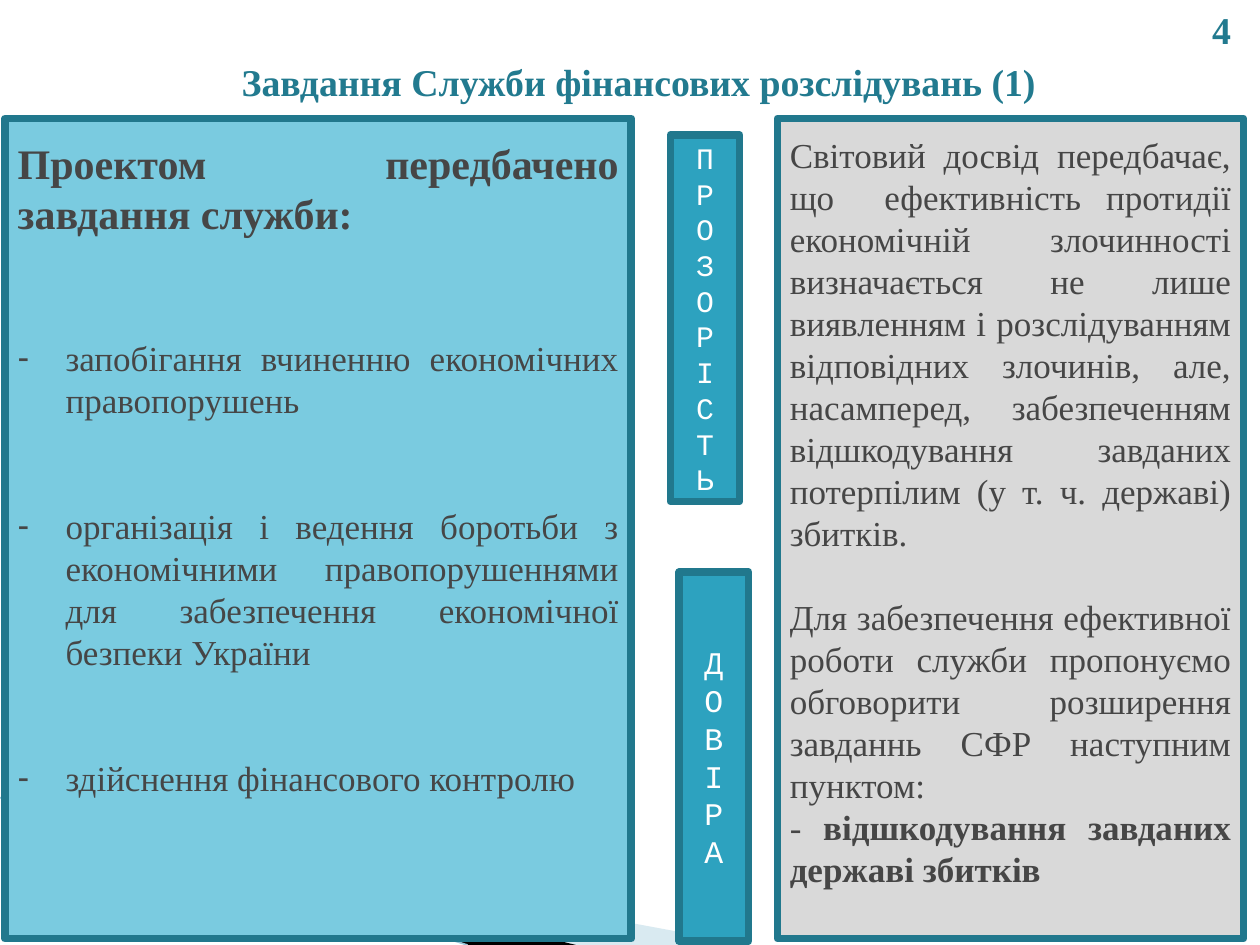
import dataclasses

import lxml.etree
import pptx
import pptx.dml.color
import pptx.enum.dml
import pptx.enum.shapes
import pptx.enum.text
import pptx.oxml.ns
import pptx.util

Inches = pptx.util.Inches
Pt = pptx.util.Pt
ALIGN = pptx.enum.text.PP_ALIGN
ANCHOR = pptx.enum.text.MSO_ANCHOR
qn = pptx.oxml.ns.qn


@dataclasses.dataclass(frozen=True)
class Theme:
    serif: str = "Times New Roman"
    mono: str = "Courier New"
    accent: str = "227A8F"
    border: str = "21788D"
    task_fill: str = "7ACBE0"
    note_fill: str = "D9D9D9"
    pillar_fill: str = "2DA2BF"
    text: str = "464646"
    light: str = "FFFFFF"
    wave_light: str = "A0CBDC"
    wave_dark: str = "000000"
    wave_line: str = "97C5D8"
    title_pt: float = 21.6
    heading_pt: float = 24
    body_pt: float = 20
    border_pt: float = 4.33


THEME = Theme()
HEADING = "Проектом передбачено завдання служби:"
TASKS = [
    "запобігання вчиненню економічних правопорушень",
    "організація і ведення боротьби з економічними правопорушеннями "
    "для забезпечення економічної безпеки України",
    "здійснення фінансового контролю",
]
NOTES = [
    [("Світовий досвід передбачає, що  ефективність протидії економічній "
      "злочинності визначається не лише виявленням і розслідуванням "
      "відповідних злочинів, але, насамперед, забезпеченням відшкодування "
      "завданих потерпілим (у т. ч. державі) збитків.", False)],
    [("Для забезпечення ефективної роботи служби пропонуємо обговорити "
      "розширення завданнь СФР наступним пунктом:", False)],
    [("- ", False), ("відшкодування завданих державі збитків", True)],
]


def rgb(value):
    return pptx.dml.color.RGBColor.from_string(value)


def place(s, box):
    s.left, s.top, s.width, s.height = (Inches(v) for v in box)


def paint(s, fill):
    s.fill.solid()
    s.fill.fore_color.rgb = rgb(fill)
    s.line.color.rgb = rgb(THEME.border)
    s.line.width = Pt(THEME.border_pt)


def setup_text(s, anchor, top=0.05):
    tf = s.text_frame
    tf.word_wrap = True
    tf.auto_size = pptx.enum.text.MSO_AUTO_SIZE.NONE
    tf.vertical_anchor = anchor
    tf.margin_top = Inches(top)
    return tf


def add_paragraph(tf, index, align, before=0, after=0):
    p = tf.paragraphs[0] if index == 0 else tf.add_paragraph()
    p.alignment = align
    p.space_before = Pt(before)
    p.space_after = Pt(after)
    return p


def add_run(p, text, size, color, font=THEME.serif, bold=False):
    r = p.add_run()
    r.text = text
    r.font.name = font
    r.font.size = Pt(size)
    r.font.bold = bold
    r.font.color.rgb = rgb(color)


def set_bullet(p, char=None, indent=0):
    """Hang the paragraph on a bullet, or clear the inherited one."""
    pPr = p._p.get_or_add_pPr()
    pPr.set("marL", str(Inches(indent)))
    pPr.set("indent", str(-Inches(indent)))
    if char:
        lxml.etree.SubElement(pPr, qn("a:buChar")).set("char", char)
    else:
        lxml.etree.SubElement(pPr, qn("a:buNone"))


def add_rect(slide, box, fill):
    s = slide.shapes.add_shape(pptx.enum.shapes.MSO_SHAPE.RECTANGLE,
                               *(Inches(v) for v in box))
    s.shadow.inherit = False
    paint(s, fill)
    return s


def add_wave(slide, points, fill, opacity=100):
    start, *rest = [(Inches(x), Inches(y)) for x, y in points]
    builder = slide.shapes.build_freeform(*start)
    builder.add_line_segments(rest, close=True)
    s = builder.convert_to_shape()
    s.shadow.inherit = False
    s.fill.solid()
    s.fill.fore_color.rgb = rgb(fill)
    s.line.fill.background()
    if opacity < 100:
        color = s._element.spPr.find(".//" + qn("a:srgbClr"))
        lxml.etree.SubElement(color, qn("a:alpha")).set("val", str(opacity * 1000))
    return s


def add_backdrop(slide, left, top):
    """Corner waves and their edge line, sent behind the text."""
    bottom = 7.5
    light = add_wave(slide, [(left, top), (left + 5.4, bottom),
                             (left + 4.01, bottom)], THEME.wave_light, 40)
    dark = add_wave(slide, [(left, top), (left + 4.02, bottom),
                            (left + 3.17, bottom)], THEME.wave_dark)
    line = slide.shapes.add_connector(
        pptx.enum.shapes.MSO_CONNECTOR.STRAIGHT,
        0, Inches(top - 0.17), Inches(left + 3.16), Inches(bottom))
    line.line.color.rgb = rgb(THEME.wave_line)
    line.line.width = Pt(0.95)
    lxml.etree.SubElement(line._element.spPr, qn("a:effectLst"))
    for position, s in enumerate((light, dark, line), start=2):
        slide.shapes._spTree.insert(position, s._element)


def add_header(s, box, text):
    place(s, box)
    p = add_paragraph(setup_text(s, ANCHOR.MIDDLE), 0, ALIGN.CENTER)
    add_run(p, text, THEME.title_pt, THEME.accent, bold=True)


def add_tasks(s, box):
    place(s, box)
    paint(s, THEME.task_fill)
    tf = setup_text(s, ANCHOR.TOP, 0.15)
    p = add_paragraph(tf, 0, ALIGN.JUSTIFY, after=56)
    set_bullet(p)
    add_run(p, HEADING, THEME.heading_pt, THEME.text, bold=True)
    for i, task in enumerate(TASKS, start=1):
        p = add_paragraph(tf, i, ALIGN.JUSTIFY, after=48 if i < len(TASKS) else 0)
        set_bullet(p, "-", 0.38)
        add_run(p, task, THEME.body_pt, THEME.text)


def add_notes(slide, box):
    tf = setup_text(add_rect(slide, box, THEME.note_fill), ANCHOR.TOP, 0.12)
    for i, runs in enumerate(NOTES):
        p = add_paragraph(tf, i, ALIGN.JUSTIFY, before=24 if i == 1 else 0)
        for text, bold in runs:
            add_run(p, text, THEME.body_pt, THEME.text, bold=bold)


def add_pillar(slide, box, word, size):
    """Narrow box with the word set one letter to a line."""
    tf = setup_text(add_rect(slide, box, THEME.pillar_fill), ANCHOR.MIDDLE)
    for i, letter in enumerate(word):
        p = add_paragraph(tf, i, ALIGN.CENTER)
        add_run(p, letter, size, THEME.light, THEME.mono)


def main():
    prs = pptx.Presentation()
    prs.slide_width, prs.slide_height = Inches(10), Inches(7.5)
    slide = prs.slides.add_slide(prs.slide_layouts[1])
    add_backdrop(slide, 0.55, 6.5)
    add_header(slide.shapes.title, (1.52, 0.3, 7.1, 0.69),
               "Завдання Служби фінансових розслідувань (1)")
    add_tasks(slide.placeholders[1], (0.04, 0.94, 4.97, 6.51))
    add_notes(slide, (6.17, 0.94, 3.7, 6.51))
    add_pillar(slide, (5.32, 1.07, 0.55, 2.91), "ПРОЗОРІСТЬ", 17)
    add_pillar(slide, (5.39, 4.54, 0.55, 2.93), "ДОВІРА", 18)
    add_header(slide.shapes.add_textbox(0, 0, 0, 0), (9.46, 0.02, 0.47, 0.43), "4")
    prs.save("out.pptx")


if __name__ == "__main__":
    main()
